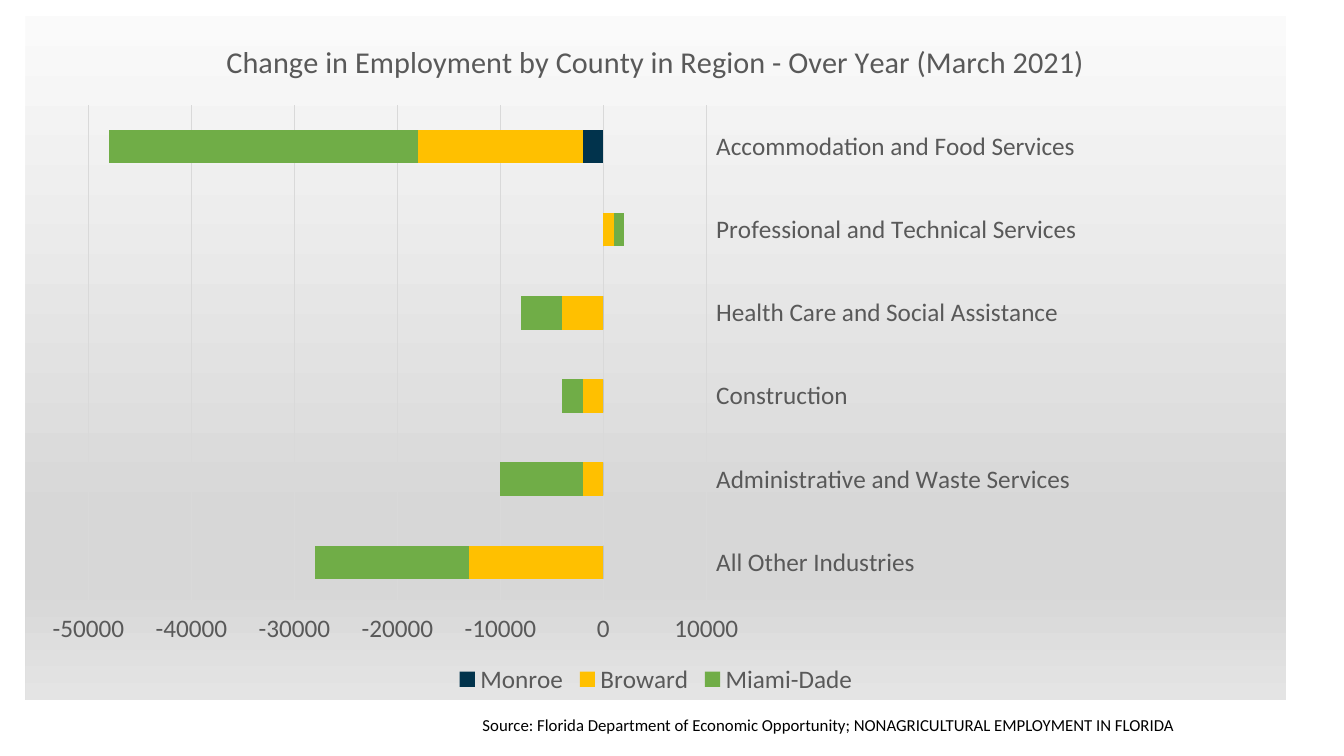
from dataclasses import dataclass

from lxml import etree
from pptx import Presentation
from pptx.chart.chart import Chart
from pptx.chart.data import CategoryChartData
from pptx.dml.color import RGBColor
from pptx.enum.chart import XL_CHART_TYPE, XL_LEGEND_POSITION, XL_TICK_LABEL_POSITION, XL_TICK_MARK
from pptx.enum.shapes import MSO_SHAPE
from pptx.enum.text import MSO_ANCHOR, PP_ALIGN
from pptx.oxml import parse_xml
from pptx.oxml.ns import nsdecls, qn
from pptx.slide import Slide
from pptx.text.text import Font
from pptx.util import Cm, Pt

STACKED_BARS = XL_CHART_TYPE.BAR_STACKED
LEGEND_BOTTOM = XL_LEGEND_POSITION.BOTTOM
LABELS_HIGH = XL_TICK_LABEL_POSITION.HIGH
LABELS_LOW = XL_TICK_LABEL_POSITION.LOW
NO_TICK = XL_TICK_MARK.NONE
RECTANGLE = MSO_SHAPE.RECTANGLE
BOTTOM = MSO_ANCHOR.BOTTOM
LEFT = PP_ALIGN.LEFT

COLORS = {
    "white": "FFFFFF",
    "black": "000000",
    "gray": "595959",
    "grid": "D9D9D9",
    "navy": "01334C",
    "amber": "FFC000",
    "green": "70AD47",
}
GRADIENT = {0: "FAFAFA", 74: "D7D7D7", 83: "D7D7D7", 100: "E4E4E4"}
PLOT_AREA = {"x": 0.05, "y": 0.13, "w": 0.49, "h": 0.73}
TITLE = "Change in Employment by County in Region - Over Year (March 2021)"
SOURCE = "Source: Florida Department of Economic Opportunity; NONAGRICULTURAL EMPLOYMENT IN FLORIDA"
INDUSTRIES = (
    "All Other Industries",
    "Administrative and Waste Services",
    "Construction",
    "Health Care and Social Assistance",
    "Professional and Technical Services",
    "Accommodation and Food Services",
)


@dataclass(frozen=True)
class County:
    name: str
    color: str
    changes: tuple[int, ...]


COUNTIES = (
    County("Monroe", "navy", (0, 0, 0, 0, 0, -2000)),
    County("Broward", "amber", (-13000, -2000, -2000, -4000, 1000, -16000)),
    County("Miami-Dade", "green", (-15000, -8000, -2000, -4000, 1000, -30000)),
)


def rgb(color: str) -> RGBColor:
    return RGBColor.from_string(COLORS[color])


def apply_format(target: object, values: dict[str, object]) -> None:
    for attribute, value in values.items():
        setattr(target, attribute, value)


def style_font(font: Font, size: float, color: str) -> None:
    apply_format(font, {"name": "Calibri", "size": Pt(size), "bold": False})
    font.color.rgb = rgb(color)


def add_source(slide: Slide) -> None:
    source = slide.shapes.add_shape(RECTANGLE, Cm(11.91), Cm(17.37), Cm(29.57), Cm(1.27))
    source.shadow.inherit = False
    source.fill.solid()
    source.fill.fore_color.rgb = rgb("white")
    source.line.fill.background()
    apply_format(source.text_frame, {"word_wrap": True, "vertical_anchor": BOTTOM})
    paragraph = source.text_frame.paragraphs[0]
    apply_format(paragraph, {"text": SOURCE, "alignment": LEFT})
    style_font(paragraph.runs[0].font, 12, "black")


def shade_background(chart: Chart) -> None:
    stops = "".join(
        f'<a:gs pos="{position * 1000}"><a:srgbClr val="{color}"/></a:gs>'
        for position, color in GRADIENT.items()
    )
    background = parse_xml(
        f'<c:spPr {nsdecls("c", "a")}><a:gradFill><a:gsLst>{stops}</a:gsLst>'
        '<a:lin ang="5400000" scaled="0"/></a:gradFill><a:ln><a:noFill/></a:ln></c:spPr>'
    )
    chart.element.find(qn("c:chart")).addnext(background)


def place_plot_area(chart: Chart) -> None:
    plot_area = chart.element.find(qn("c:chart")).find(qn("c:plotArea"))
    for automatic in plot_area.findall(qn("c:layout")):
        plot_area.remove(automatic)
    layout = etree.Element(qn("c:layout"))
    manual = etree.SubElement(layout, qn("c:manualLayout"))
    settings = {"layoutTarget": "inner", "xMode": "edge", "yMode": "edge", **PLOT_AREA}
    for tag, value in settings.items():
        etree.SubElement(manual, qn(f"c:{tag}"), val=str(value))
    plot_area.insert(0, layout)


def style_axes(chart: Chart) -> None:
    industry_axis, change_axis = chart.category_axis, chart.value_axis
    shared = {"major_tick_mark": NO_TICK, "minor_tick_mark": NO_TICK}
    apply_format(industry_axis, {**shared, "tick_label_position": LABELS_HIGH})
    apply_format(change_axis, {
        **shared,
        "tick_label_position": LABELS_LOW,
        "minimum_scale": -50000,
        "maximum_scale": 10000,
        "major_unit": 10000,
        "has_major_gridlines": True,
    })
    for axis in (industry_axis, change_axis):
        style_font(axis.tick_labels.font, 18, "gray")
    apply_format(change_axis.tick_labels, {"number_format": "General", "number_format_is_linked": False})
    change_axis.format.line.fill.background()
    for line in (industry_axis.format.line, change_axis.major_gridlines.format.line):
        line.color.rgb = rgb("grid")
        line.width = Pt(0.75)


def add_employment_chart(slide: Slide) -> None:
    employment = CategoryChartData()
    employment.categories = INDUSTRIES
    for county in COUNTIES:
        employment.add_series(county.name, county.changes)
    chart = slide.shapes.add_chart(
        STACKED_BARS, Cm(0.64), Cm(0.41), Cm(31.78), Cm(17.22), employment
    ).chart
    shade_background(chart)
    place_plot_area(chart)
    style_font(chart.font, 18, "black")
    apply_format(chart, {"has_title": True, "has_legend": True})
    heading = chart.chart_title.text_frame
    heading.text = TITLE
    style_font(heading.paragraphs[0].runs[0].font, 21.6, "gray")
    apply_format(chart.legend, {"position": LEGEND_BOTTOM, "include_in_layout": False})
    style_font(chart.legend.font, 18, "gray")
    style_axes(chart)
    bars = chart.plots[0]
    apply_format(bars, {"gap_width": 150, "overlap": 100, "vary_by_categories": False})
    for series, county in zip(bars.series, COUNTIES):
        series.invert_if_negative = False
        series.format.fill.solid()
        series.format.fill.fore_color.rgb = rgb(county.color)


def main() -> None:
    presentation = Presentation()
    apply_format(presentation, {"slide_width": Cm(33.87), "slide_height": Cm(19.05)})
    slide = presentation.slides.add_slide(presentation.slide_layouts[6])
    add_source(slide)
    add_employment_chart(slide)
    presentation.save("out.pptx")


if __name__ == "__main__":
    main()
